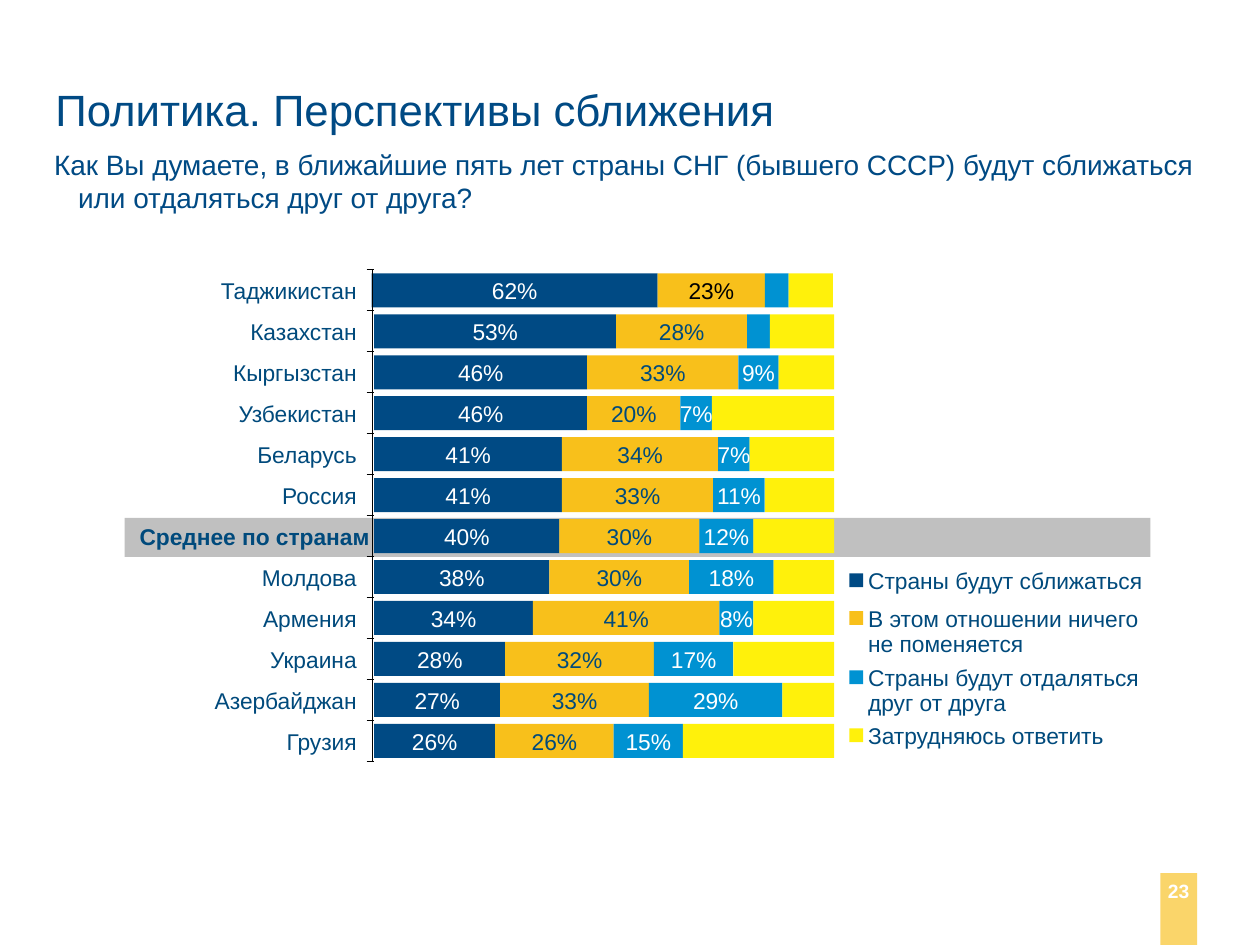
from typing import NamedTuple

from lxml import etree
from pptx import Presentation
from pptx.dml.color import RGBColor
from pptx.enum.shapes import MSO_CONNECTOR, MSO_SHAPE
from pptx.enum.text import MSO_AUTO_SIZE, PP_ALIGN
from pptx.oxml.ns import qn
from pptx.util import Inches, Pt

RECT, ROUNDED = MSO_SHAPE.RECTANGLE, MSO_SHAPE.ROUNDED_RECTANGLE
STRAIGHT = MSO_CONNECTOR.STRAIGHT
FIT, FIXED = MSO_AUTO_SIZE.SHAPE_TO_FIT_TEXT, MSO_AUTO_SIZE.NONE
LEFT, CENTER, RIGHT = PP_ALIGN.LEFT, PP_ALIGN.CENTER, PP_ALIGN.RIGHT

NAVY = RGBColor(0x00, 0x4A, 0x84)
AMBER = RGBColor(0xF8, 0xC0, 0x1B)
BLUE = RGBColor(0x00, 0x92, 0xD2)
YELLOW = RGBColor(0xFF, 0xF1, 0x0B)
INK = RGBColor(0x00, 0x4A, 0x7C)
GRAY = RGBColor(0xC0, 0xC0, 0xC0)
WHITE = RGBColor(0xFF, 0xFF, 0xFF)
BLACK = RGBColor(0x00, 0x00, 0x00)

FONT = "Arial"
ROW_TOP, ROW_STEP, BAR_H = 2.17, 0.325, 0.27
BAR_LEFT, BAR_RIGHT = 2.97, 6.62
AXIS_X, AXIS_TOP = 2.955, 2.14
TEXT_H, LEGEND_STEP = 0.22, 0.2


class Row(NamedTuple):
    name: str
    name_w: float
    ends: tuple[float, float, float]
    labels: tuple[str, ...]
    left: float = BAR_LEFT
    right: float = BAR_RIGHT
    name_right: float = 2.83
    bold: bool = False
    amber_ink: RGBColor = INK


class LegendItem(NamedTuple):
    lines: tuple[str, ...]
    top: float
    color: RGBColor


ROWS = [
    Row("Таджикистан", 1.1, (5.22, 6.07, 6.26), ("62%", "23%"),
        left=2.95, right=6.61, amber_ink=BLACK),
    Row("Казахстан", 0.87, (4.89, 5.93, 6.11), ("53%", "28%")),
    Row("Кыргызстан", 1.01, (4.66, 5.86, 6.18), ("46%", "33%", "9%")),
    Row("Узбекистан", 0.97, (4.66, 5.4, 5.65), ("46%", "20%", "7%")),
    Row("Беларусь", 0.82, (4.46, 5.7, 5.95), ("41%", "34%", "7%")),
    Row("Россия", 0.62, (4.46, 5.66, 6.07), ("41%", "33%", "11%")),
    Row("Среднее по странам", 1.87, (4.44, 5.55, 5.98), ("40%", "30%", "12%"),
        name_right=2.93, bold=True),
    Row("Молдова", 0.78, (4.36, 5.47, 6.14), ("38%", "30%", "18%")),
    Row("Армения", 0.77, (4.23, 5.71, 5.98), ("34%", "41%", "8%")),
    Row("Украина", 0.72, (4.01, 5.19, 5.82), ("28%", "32%", "17%")),
    Row("Азербайджан", 1.16, (3.97, 5.15, 6.21), ("27%", "33%", "29%")),
    Row("Грузия", 0.59, (3.93, 4.87, 5.42), ("26%", "26%", "15%")),
]

LEGEND = [
    LegendItem(("Страны будут сближаться",), 4.5, NAVY),
    LegendItem(("В этом отношении ничего", "не поменяется"), 4.8, AMBER),
    LegendItem(("Страны будут отдаляться", "друг от друга"), 5.27, BLUE),
    LegendItem(("Затрудняюсь ответить",), 5.73, YELLOW),
]


def add_box(s, x: float, y: float, w: float, h: float, color: RGBColor, kind=RECT):
    sp = s.shapes.add_shape(kind, Inches(x), Inches(y), Inches(w), Inches(h))
    sp.shadow.inherit = False
    sp.fill.solid()
    sp.fill.fore_color.rgb = color
    sp.line.fill.background()
    return sp


def add_text(s, text: str, x: float, y: float, w: float, h: float = TEXT_H,
             size: float = 13, color: RGBColor = INK, bold: bool = False,
             align=LEFT, wrap: bool = False):
    sp = s.shapes.add_textbox(Inches(x), Inches(y), Inches(w), Inches(h))
    tf = sp.text_frame
    tf.margin_left = tf.margin_right = tf.margin_top = tf.margin_bottom = 0
    tf.word_wrap = wrap
    tf.auto_size = FIXED if wrap else FIT
    p = tf.paragraphs[0]
    p.text = text
    p.alignment = align
    for r in p.runs:
        r.font.name = FONT
        r.font.size = Pt(size)
        r.font.bold = bold
        r.font.color.rgb = color
    return tf


def add_line(s, x1: float, y1: float, x2: float, y2: float) -> None:
    c = s.shapes.add_connector(STRAIGHT, Inches(x1), Inches(y1), Inches(x2), Inches(y2))
    c.line.color.rgb = BLACK
    c.line.width = Pt(0.5)
    etree.SubElement(c._element.spPr, qn("a:effectLst"))


def add_row(s, row: Row, top: float) -> None:
    edges = (row.left, *row.ends, row.right)
    for x1, x2, color in zip(edges, edges[1:], (NAVY, AMBER, BLUE, YELLOW)):
        add_box(s, x1, top, x2 - x1, BAR_H, color)
    for x1, x2, label, color in zip(edges, edges[1:], row.labels,
                                    (WHITE, row.amber_ink, WHITE)):
        w = 0.38 if len(label) == 3 else 0.27
        add_text(s, label, (x1 + x2 - w) / 2, top + 0.03, w, color=color, align=CENTER)
    add_text(s, row.name, row.name_right - row.name_w, top + 0.03, row.name_w,
             bold=row.bold, align=RIGHT)


def add_legend_item(s, item: LegendItem) -> None:
    add_box(s, 6.74, item.top + 0.05, 0.11, 0.11, item.color)
    for i, line in enumerate(item.lines):
        add_text(s, line, 6.89, item.top + i * LEGEND_STEP, 2.25, wrap=True)


def add_page_number(s, number: str) -> None:
    tab = add_box(s, 9.21, 6.93, 0.29, 0.57, AMBER, ROUNDED)
    tab.adjustments[0] = 0
    fill_color = tab._element.spPr.find(".//" + qn("a:srgbClr"))
    etree.SubElement(fill_color, qn("a:alpha"), val="65000")
    add_text(s, number, 9.1, 6.98, 0.51, size=11, color=WHITE, bold=True,
             align=CENTER, wrap=True)


def main() -> None:
    prs = Presentation()
    prs.slide_width, prs.slide_height = Inches(10), Inches(7.5)
    s = prs.slides.add_slide(prs.slide_layouts[6])

    add_page_number(s, "23")
    add_box(s, 0.99, 4.11, 8.14, 0.31, GRAY)
    for i, row in enumerate(ROWS):
        add_row(s, row, ROW_TOP + i * ROW_STEP)

    add_line(s, AXIS_X, AXIS_TOP, AXIS_X, AXIS_TOP + len(ROWS) * ROW_STEP)
    for i in range(len(ROWS) + 1):
        y = AXIS_TOP + i * ROW_STEP
        add_line(s, 2.91, y, BAR_LEFT, y)

    for item in LEGEND:
        add_legend_item(s, item)

    add_text(s, "Политика. Перспективы сближения", 0.44, 0.66, 9.07, 0.86,
             size=25, color=NAVY, wrap=True)
    tf = add_text(s, "Как Вы думаете, в ближайшие пять лет страны СНГ (бывшего СССР) "
                  "будут сближаться\vили отдаляться друг от друга?",
                  0.43, 1.17, 9.19, 0.52, size=16, color=NAVY, wrap=True)
    pPr = tf.paragraphs[0]._p.get_or_add_pPr()
    pPr.set("marL", str(Inches(0.19)))
    pPr.set("indent", str(-Inches(0.19)))

    prs.save("out.pptx")


if __name__ == "__main__":
    main()
